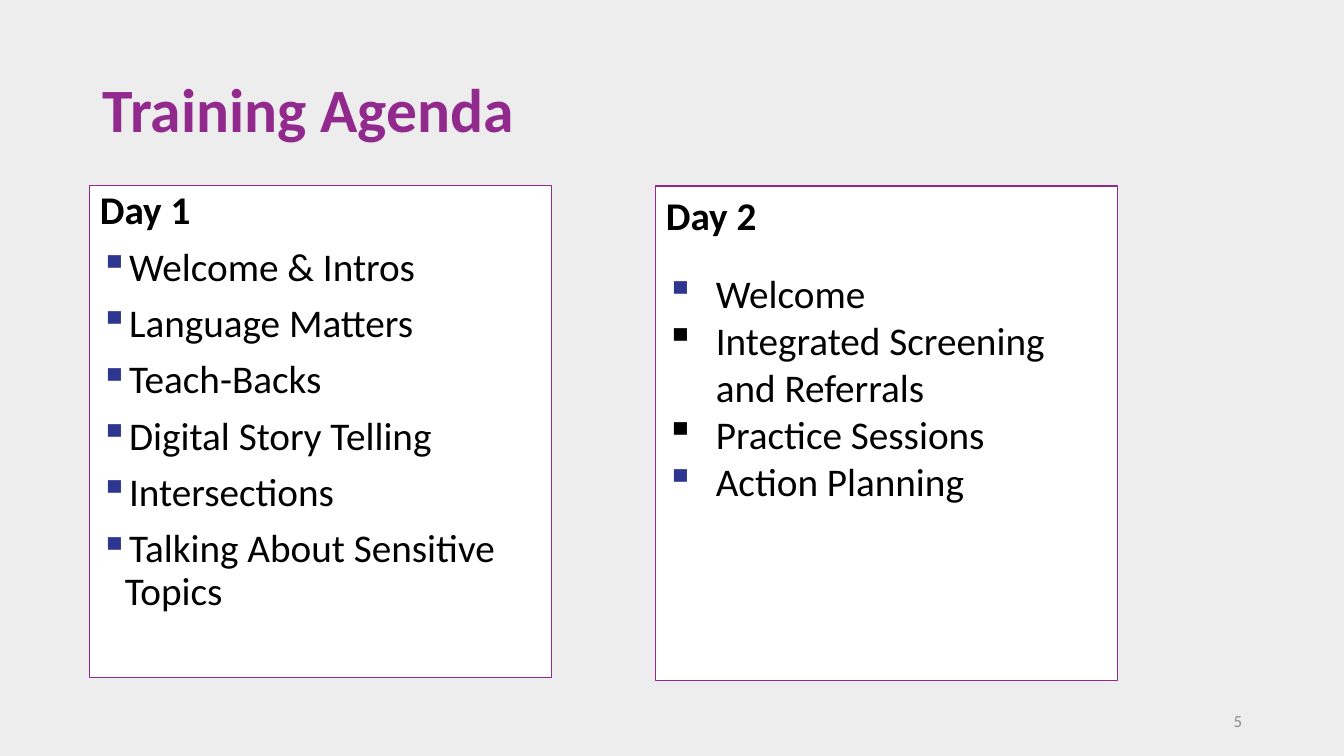
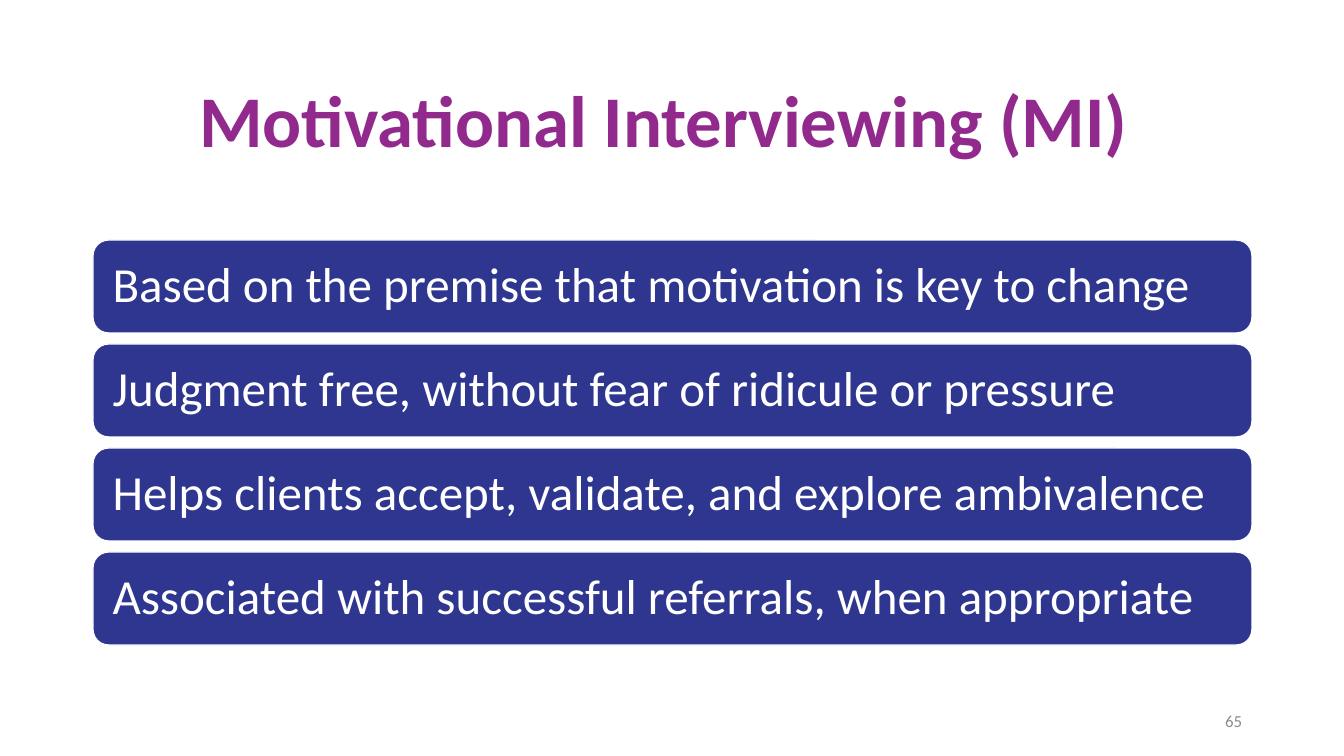
from dataclasses import dataclass

from lxml.etree import SubElement
from pptx import Presentation
from pptx.dml.color import RGBColor
from pptx.enum.shapes import MSO_SHAPE
from pptx.enum.text import MSO_ANCHOR, PP_ALIGN
from pptx.oxml.ns import qn
from pptx.util import Emu, Pt

EMU_PER_PX = 12192000 / 1344


@dataclass(frozen=True)
class Theme:
    font: str = "Calibri"
    purple: str = "922A8E"
    navy: str = "2E368F"
    white: str = "FFFFFF"
    black: str = "000000"
    pale_grey: str = "EDEDED"
    number_grey: str = "8C8C8C"
    title_size: int = 44
    large_title_size: int = 52
    body_size: int = 28
    bar_size: int = 35
    number_size: int = 12


THEME = Theme()
DAY_1 = ["Welcome & Intros", "Language Matters", "Teach-Backs", "Digital Story Telling",
         "Intersections", "Talking About Sensitive Topics"]
DAY_2 = [("Welcome", THEME.navy), ("Integrated Screening and Referrals", None),
         ("Practice Sessions", None), ("Action Planning", THEME.navy)]
PRINCIPLES = ["Based on the premise that motivation is key to change",
              "Judgment free, without fear of ridicule or pressure",
              "Helps clients accept, validate, and explore ambivalence",
              "Associated with successful referrals, when appropriate"]


def px(length):
    return Emu(round(length * EMU_PER_PX))


def color(code):
    return RGBColor.from_string(code)


def add_page(deck, background):
    page = deck.slides.add_slide(deck.slide_layouts[6])
    page.background.fill.solid()
    page.background.fill.fore_color.rgb = color(background)
    return page


def add_box(page, left, top, width, height, anchor=MSO_ANCHOR.MIDDLE):
    box = page.shapes.add_textbox(px(left), px(top), px(width), px(height))
    box.text_frame.word_wrap = True
    box.text_frame.vertical_anchor = anchor
    return box


def add_panel(page, left, top, width, height, *, kind=MSO_SHAPE.RECTANGLE, fill=THEME.white,
              line=THEME.purple, line_width=0.75, anchor=MSO_ANCHOR.TOP):
    panel = page.shapes.add_shape(kind, px(left), px(top), px(width), px(height))
    panel.shadow.inherit = False
    panel.fill.solid()
    panel.fill.fore_color.rgb = color(fill)
    panel.line.color.rgb = color(line)
    panel.line.width = Pt(line_width)
    panel.text_frame.word_wrap = True
    panel.text_frame.vertical_anchor = anchor
    return panel


def add_bullet(para, indent, bullet_color):
    """Give a paragraph a square bullet; without a colour it follows the text."""
    properties = para._p.get_or_add_pPr()
    properties.set("marL", str(px(indent)))
    properties.set("indent", str(-px(indent)))
    if bullet_color:
        SubElement(SubElement(properties, qn("a:buClr")), qn("a:srgbClr"), val=bullet_color)
    SubElement(properties, qn("a:buChar"), char="▪")


def write(box, text, *, size=THEME.body_size, text_color=THEME.black, bold=False,
          align=PP_ALIGN.LEFT, line_spacing=1.0, before=0, after=0,
          bullet_indent=0, bullet_color=None):
    """Fill the first paragraph of a box, or append one if it is taken."""
    frame = box.text_frame
    para = frame.paragraphs[0] if not frame.text else frame.add_paragraph()
    if bullet_indent:
        add_bullet(para, bullet_indent, bullet_color)
    para.alignment = align
    para.line_spacing = line_spacing
    para.space_before = Pt(before)
    para.space_after = Pt(after)
    span = para.add_run()
    span.text = text
    span.font.name = THEME.font
    span.font.size = Pt(size)
    span.font.bold = bold
    span.font.color.rgb = color(text_color)


def add_title(page, text, left, top, height, **text_format):
    box = add_box(page, left, top, 1159, height)
    write(box, text, text_color=THEME.purple, bold=True, line_spacing=0.9, **text_format)


def add_page_number(page, number):
    box = add_box(page, 950, 701, 302, 40)
    write(box, str(number), size=THEME.number_size, text_color=THEME.number_grey,
          align=PP_ALIGN.RIGHT)


def add_bars(page, texts, left=93, top=240, width=1159, height=93, gap=11):
    for index, text in enumerate(texts):
        bar = add_panel(page, left, top + index * (height + gap), width, height,
                        kind=MSO_SHAPE.ROUNDED_RECTANGLE, fill=THEME.navy,
                        line=THEME.white, line_width=1, anchor=MSO_ANCHOR.MIDDLE)
        bar.text_frame.margin_left = bar.text_frame.margin_right = px(15)
        write(bar, text, size=THEME.bar_size, text_color=THEME.white, line_spacing=0.9)


def build_agenda(deck):
    page = add_page(deck, THEME.pale_grey)
    add_title(page, "Training Agenda", 93, 40, 146, size=THEME.title_size)

    first_day = add_panel(page, 90, 186, 462, 492)
    write(first_day, "Day 1", bold=True, line_spacing=0.9)
    for topic in DAY_1:
        write(first_day, topic, line_spacing=0.9, before=10,
              bullet_indent=25, bullet_color=THEME.navy)

    second_day = add_panel(page, 656, 186, 462, 495)
    write(second_day, "Day 2", bold=True, after=22)
    for topic, bullet_color in DAY_2:
        write(second_day, topic, bullet_indent=50, bullet_color=bullet_color)
    add_page_number(page, 5)


def build_interviewing(deck):
    page = add_page(deck, THEME.white)
    add_title(page, "Motivational Interviewing (MI)", 84, 61, 125,
              size=THEME.large_title_size, align=PP_ALIGN.CENTER)
    add_bars(page, PRINCIPLES)
    add_page_number(page, 65)


def main():
    deck = Presentation()
    deck.slide_width = px(1344)
    deck.slide_height = px(756)
    build_agenda(deck)
    build_interviewing(deck)
    deck.save("out.pptx")


if __name__ == "__main__":
    main()
